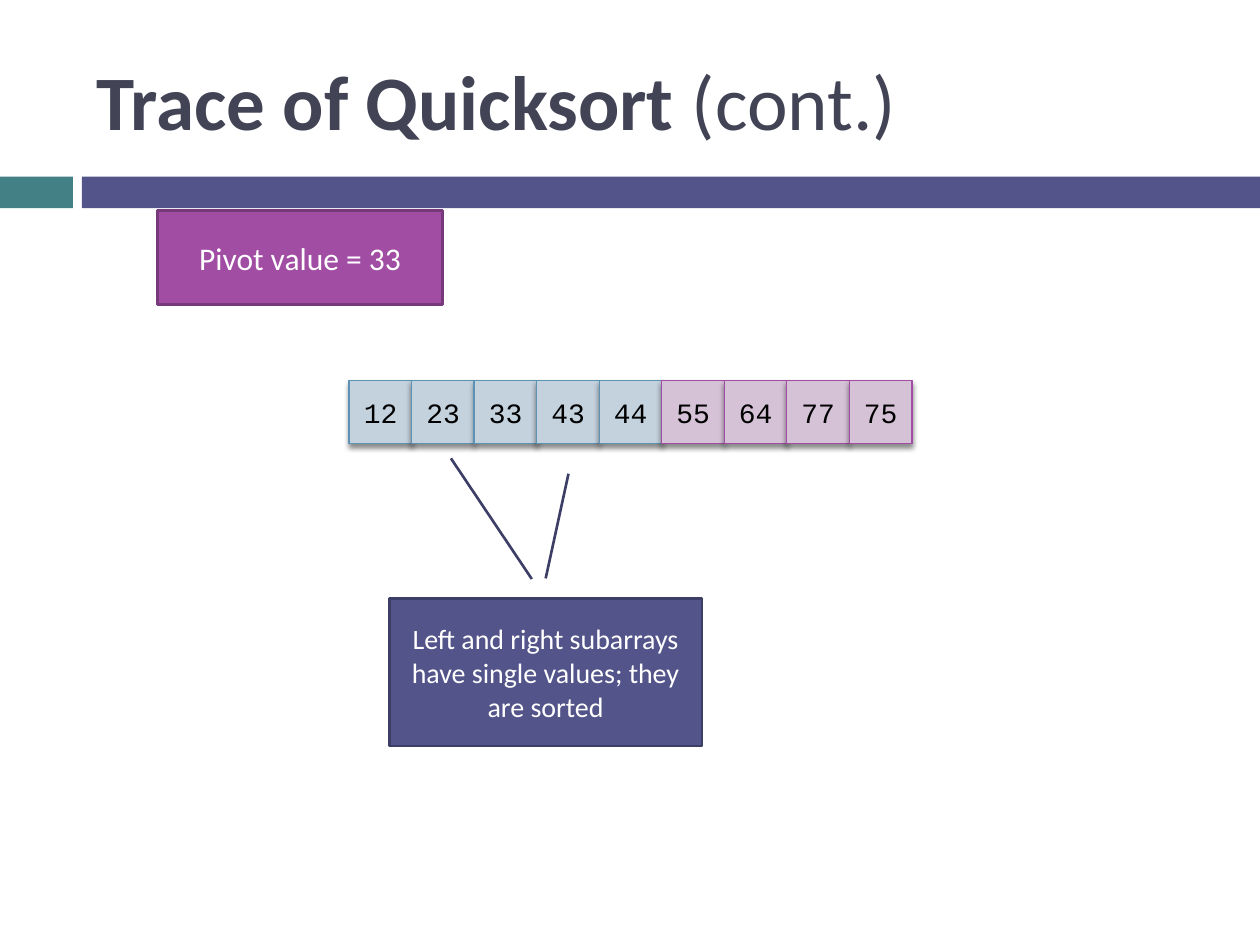
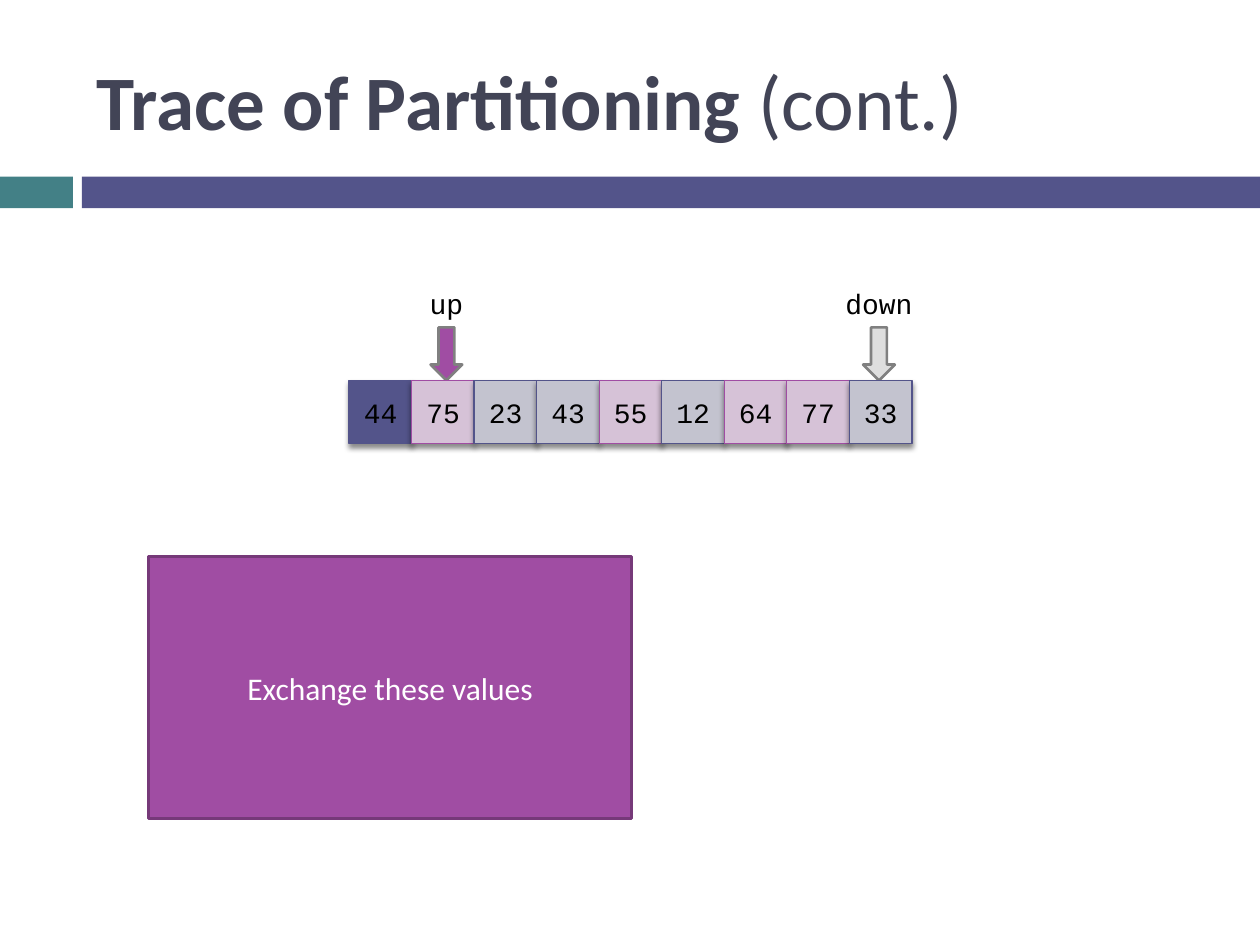
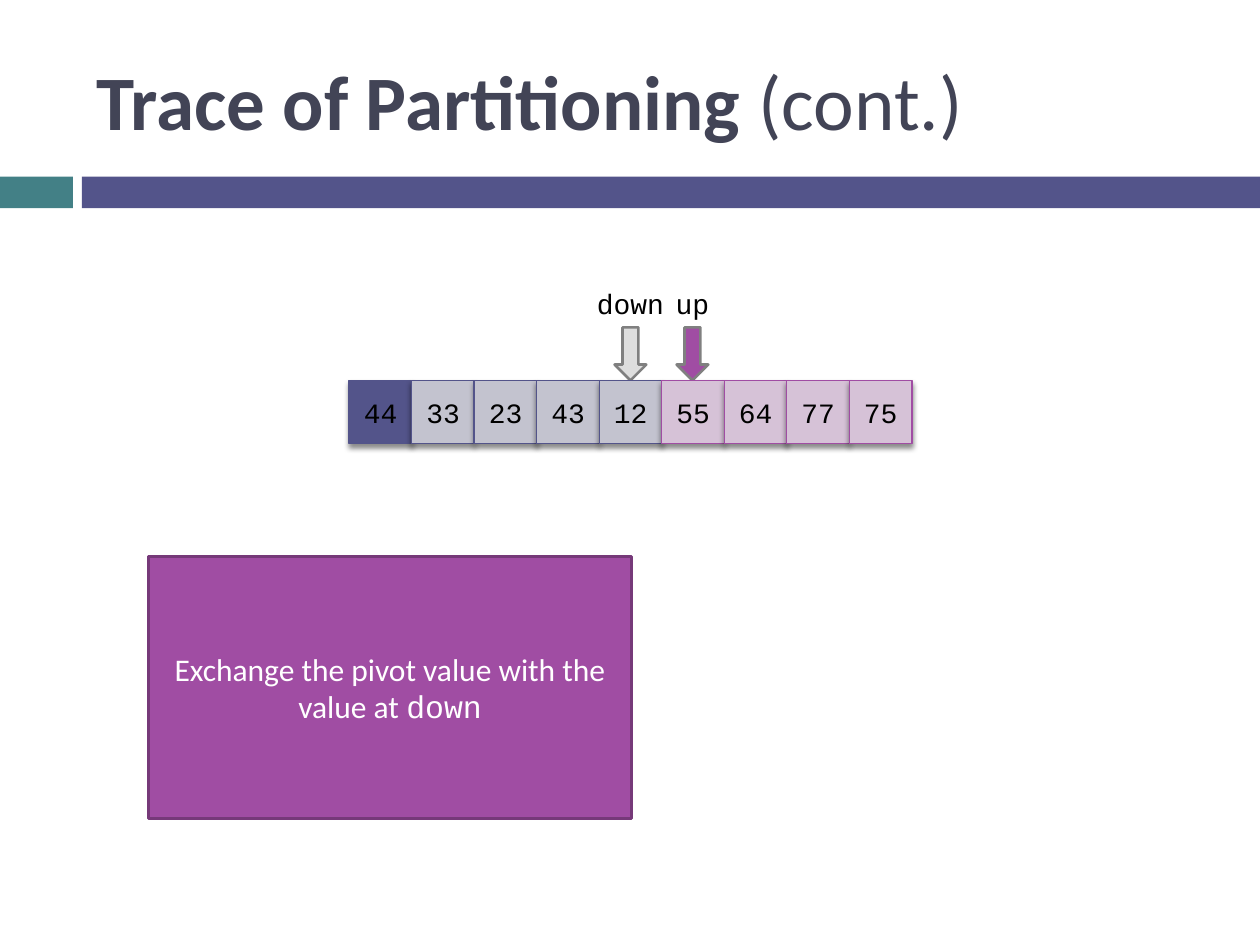
from lxml.etree import SubElement
from pptx import Presentation
from pptx.dml.color import RGBColor
from pptx.enum.shapes import MSO_CONNECTOR, MSO_SHAPE
from pptx.enum.text import MSO_ANCHOR, PP_ALIGN
from pptx.oxml.ns import qn
from pptx.util import Cm, Pt

BLACK = RGBColor(0x00, 0x00, 0x00)
WHITE = RGBColor(0xFF, 0xFF, 0xFF)
SLATE = RGBColor(0x42, 0x44, 0x56)
TEAL = RGBColor(0x43, 0x80, 0x86)
INDIGO = RGBColor(0x53, 0x54, 0x8A)
DARK_INDIGO = RGBColor(0x3D, 0x3E, 0x66)
PALE_INDIGO = RGBColor(0xC3, 0xC3, 0xCF)
PURPLE = RGBColor(0xA0, 0x4D, 0xA3)
DARK_PURPLE = RGBColor(0x76, 0x39, 0x79)
PALE_PURPLE = RGBColor(0xD6, 0xC2, 0xD7)
BLUE = RGBColor(0x5C, 0x92, 0xB5)
PALE_BLUE = RGBColor(0xC4, 0xD2, 0xDE)
GRAY = RGBColor(0x80, 0x80, 0x80)
PALE_GRAY = RGBColor(0xDE, 0xDE, 0xDE)

BODY, CODE = "Calibri", "Courier New"
TITLE_FONT = {"name": BODY, "size": Pt(44), "color": SLATE}
NOTE_FONT = {"name": BODY, "size": Pt(18), "color": WHITE}
CALLOUT_FONT = {**NOTE_FONT, "size": Pt(16)}
CODE_FONT = {"name": CODE, "size": Pt(16), "color": BLACK}

# Lengths in centimetres: left, top, width, height
TITLE_PLACE = (1.7, 0.64, 22.66, 2.74)
BANDS = [((0, 3.56, 1.47, 0.64), TEAL), ((1.65, 3.56, 23.75, 0.64), INDIGO)]
PIVOT_PLACE = (3.18, 4.24, 5.74, 1.9)
STEP_PLACE = (3, 11.22, 9.73, 5.28)
CALLOUT_PLACE = (7.85, 12.07, 6.3, 2.97)
CALLOUT_POINTER = (-0.134, 0.456, -0.953, 0.197)
SECOND_POINTER = (11, 11.66, 11.46, 9.55)
ARRAY_LEFT, ARRAY_TOP, CELL_STEP, CELL_SIZE = 7.04, 7.67, 1.26, 1.27
ARROW_WIDTH, ARROW_HEIGHT = 0.64, 1.07
LABEL_TOP, LABEL_WIDTH, LABEL_HEIGHT = 5.65, 2.1, 0.94

# Cell styles: fill, line
CELL_STYLES = {
    "pivot": (INDIGO, INDIGO),
    "small": (PALE_INDIGO, INDIGO),
    "large": (PALE_PURPLE, PURPLE),
    "sorted": (PALE_BLUE, BLUE),
}
MARKER_FILLS = {"up": PURPLE, "down": PALE_GRAY}

QUICKSORT = {
    "title": "Trace of Quicksort ",
    "cells": [(12, "sorted"), (23, "sorted"), (33, "sorted"), (43, "sorted"), (44, "sorted"),
              (55, "large"), (64, "large"), (77, "large"), (75, "large")],
    "note": [("Pivot value = 33", {})],
    "note_place": PIVOT_PLACE,
    "callout": [("Left and right subarrays have single values; they are sorted", {})],
}
EXCHANGE = {
    "title": "Trace of Partitioning ",
    "cells": [(44, "pivot"), (75, "large"), (23, "small"), (43, "small"), (55, "large"),
              (12, "small"), (64, "large"), (77, "large"), (33, "small")],
    "note": [("Exchange these values", {})],
    "note_place": STEP_PLACE,
    "marker_centers": {"up": 9, "down": 17.72},
}
PIVOT_EXCHANGE = {
    "title": "Trace of Partitioning ",
    "cells": [(44, "pivot"), (33, "small"), (23, "small"), (43, "small"), (12, "small"),
              (55, "large"), (64, "large"), (77, "large"), (75, "large")],
    "note": [("Exchange the pivot value with the value at ", {}), ("down", {"name": CODE})],
    "note_place": STEP_PLACE,
    "marker_centers": {"up": 13.96, "down": 12.71},
}


def lengths(values):
    return [Cm(value) for value in values]


def write(box, spans, font, align=PP_ALIGN.CENTER, anchor=MSO_ANCHOR.MIDDLE):
    """Fill a box with one paragraph; each span may override the font."""
    frame = box.text_frame
    frame.word_wrap = True
    frame.vertical_anchor = anchor
    para = frame.paragraphs[0]
    para.alignment = align
    for text, changes in spans:
        span = para.add_run()
        span.text = text
        for name, value in {**font, **changes}.items():
            if name == "color":
                span.font.color.rgb = value
            else:
                setattr(span.font, name, value)


def add_box(page, place, fill, line=None, weight=1.5, kind=MSO_SHAPE.RECTANGLE):
    box = page.shapes.add_shape(kind, *lengths(place))
    box.shadow.inherit = False
    box.fill.solid()
    box.fill.fore_color.rgb = fill
    if line is None:
        box.line.fill.background()
    else:
        box.line.color.rgb = line
        box.line.width = Pt(weight)
    return box


def add_cell_shadow(box):
    effects = box._element.spPr.find(qn("a:effectLst"))
    shadow = SubElement(effects, qn("a:outerShdw"), blurRad=str(Pt(3)), dist=str(Pt(2.4)),
                        dir="5400000", rotWithShape="0")
    color = SubElement(shadow, qn("a:srgbClr"), val=str(BLACK))
    SubElement(color, qn("a:alpha"), val="45000")


def add_array(page, cells):
    for index, (value, style) in enumerate(cells):
        place = (ARRAY_LEFT + index * CELL_STEP, ARRAY_TOP, CELL_SIZE, CELL_SIZE)
        cell = add_box(page, place, *CELL_STYLES[style], weight=0.79)
        add_cell_shadow(cell)
        write(cell, [(str(value), {})], CODE_FONT)


def add_marker(page, name, center):
    """Add an index name with an arrow that ends on the array."""
    arrow_place = (center - ARROW_WIDTH / 2, ARRAY_TOP - ARROW_HEIGHT, ARROW_WIDTH, ARROW_HEIGHT)
    add_box(page, arrow_place, MARKER_FILLS[name], GRAY, kind=MSO_SHAPE.DOWN_ARROW)
    label_place = (center - LABEL_WIDTH / 2, LABEL_TOP, LABEL_WIDTH, LABEL_HEIGHT)
    label = page.shapes.add_textbox(*lengths(label_place))
    write(label, [(name, {})], CODE_FONT, anchor=MSO_ANCHOR.TOP)


def add_callout(page, spans):
    """Add a callout with its own pointer and a second pointer line."""
    callout = add_box(page, CALLOUT_PLACE, INDIGO, DARK_INDIGO, kind=MSO_SHAPE.LINE_CALLOUT_1)
    for index, value in enumerate(CALLOUT_POINTER):
        callout.adjustments[index] = value
    write(callout, spans, CALLOUT_FONT)
    pointer = page.shapes.add_connector(MSO_CONNECTOR.STRAIGHT, *lengths(SECOND_POINTER))
    pointer.line.color.rgb = DARK_INDIGO
    pointer.line.width = Pt(1.5)
    SubElement(pointer._element.spPr, qn("a:effectLst"))


def add_page(deck, content):
    page = deck.slides.add_slide(deck.slide_layouts[6])
    for place, fill in BANDS:
        add_box(page, place, fill)
    title = page.shapes.add_textbox(*lengths(TITLE_PLACE))
    write(title, [(content["title"], {"bold": True}), ("(cont.)", {})], TITLE_FONT, PP_ALIGN.LEFT)
    for name, center in content.get("marker_centers", {}).items():
        add_marker(page, name, center)
    add_array(page, content["cells"])
    note = add_box(page, content["note_place"], PURPLE, DARK_PURPLE)
    write(note, content["note"], NOTE_FONT)
    if "callout" in content:
        add_callout(page, content["callout"])


def main():
    deck = Presentation()
    deck.slide_width, deck.slide_height = Cm(25.4), Cm(19.05)
    for content in (QUICKSORT, EXCHANGE, PIVOT_EXCHANGE):
        add_page(deck, content)
    deck.save("out.pptx")


if __name__ == "__main__":
    main()
